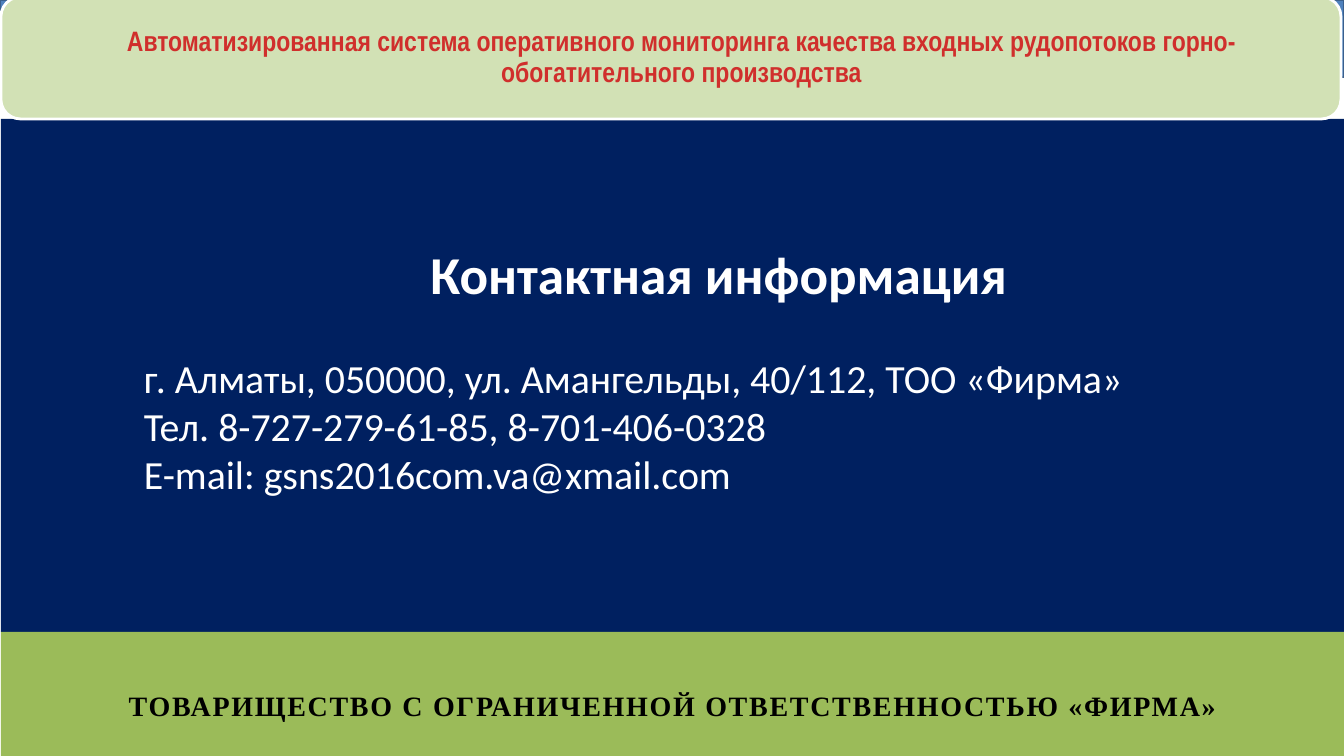
from dataclasses import dataclass

import pptx
import pptx.dml.color
import pptx.enum.shapes
import pptx.enum.text
import pptx.util

EMU_PER_PX = 9071
SHAPES = pptx.enum.shapes.MSO_SHAPE
ALIGN = pptx.enum.text.PP_ALIGN
ANCHOR = pptx.enum.text.MSO_ANCHOR


@dataclass
class Line:
    text: str
    size: float
    font: str
    color: str
    bold: bool = False
    align: ALIGN = ALIGN.CENTER
    space_before: float = 0
    line_spacing: float = 1.0
    tracking: int = 0


@dataclass
class Panel:
    box: tuple[int, int, int, int]
    fill: str
    outline: str | None = None
    kind: SHAPES = SHAPES.RECTANGLE
    corner: float | None = None
    insets: tuple[int, int, int, int] = (0, 0, 0, 0)
    anchor: ANCHOR = ANCHOR.TOP
    lines: tuple[Line, ...] = ()


def px(length: int) -> pptx.util.Emu:
    return pptx.util.Emu(length * EMU_PER_PX)


def rgb(color: str) -> pptx.dml.color.RGBColor:
    return pptx.dml.color.RGBColor.from_string(color)


def write_lines(text_frame, panel_insets: tuple[int, int, int, int],
                anchor: ANCHOR, lines: tuple[Line, ...]) -> None:
    text_frame.word_wrap = True
    text_frame.vertical_anchor = anchor
    (text_frame.margin_left, text_frame.margin_top,
     text_frame.margin_right, text_frame.margin_bottom) = map(px, panel_insets)
    for index, line in enumerate(lines):
        paragraph = text_frame.add_paragraph() if index else text_frame.paragraphs[0]
        paragraph.alignment = line.align
        paragraph.line_spacing = line.line_spacing
        if line.space_before:
            paragraph.space_before = pptx.util.Pt(line.space_before)
        run = paragraph.add_run()
        run.text = line.text
        if line.tracking:
            run.font._element.set("spc", str(line.tracking))
        paragraph.font.size = pptx.util.Pt(line.size)
        paragraph.font.name = line.font
        paragraph.font.bold = line.bold
        paragraph.font.color.rgb = rgb(line.color)


def draw_panel(slide, panel: Panel) -> None:
    shape = slide.shapes.add_shape(panel.kind, *map(px, panel.box))
    shape.shadow.inherit = False
    shape.fill.solid()
    shape.fill.fore_color.rgb = rgb(panel.fill)
    if panel.outline:
        shape.line.color.rgb = rgb(panel.outline)
        shape.line.width = pptx.util.Pt(2)
    else:
        shape.line.fill.background()
    if panel.corner is not None:
        shape.adjustments[0] = panel.corner
    if panel.lines:
        write_lines(shape.text_frame, panel.insets, panel.anchor, panel.lines)


def contact_line(text: str, space_before: float = 0) -> Line:
    return Line(text, 28.5, "Calibri", "FFFFFF", align=ALIGN.LEFT,
                space_before=space_before)


PANELS = (
    Panel((1, 119, 1343, 513), "002060"),
    Panel((0, 0, 1344, 77), "4F81BD", outline="3A5F8C"),
    Panel((1, -3, 1340, 122), "D2E1B5", outline="FFFFFF",
          kind=SHAPES.ROUNDED_RECTANGLE, corner=0.16,
          insets=(33, 12, 12, 12), anchor=ANCHOR.MIDDLE,
          lines=(Line("Автоматизированная система оперативного мониторинга качества "
                      "входных рудопотоков горно-обогатительного производства",
                      20, "Arial Narrow", "D02F2C", bold=True, line_spacing=0.9),)),
    Panel((1, 632, 1343, 124), "9BBB59", insets=(12, 57, 12, 6),
          lines=(Line("ТОВАРИЩЕСТВО С ОГРАНИЧЕННОЙ ОТВЕТСТВЕННОСТЬЮ «ФИРМА»",
                      20, "Times New Roman", "000000", bold=True, tracking=120),)),
)

CONTACT_BOX = (26, 235, 1280, 357)
CONTACT_INSETS = (118, 6, 12, 6)
CONTACT_LINES = (
    Line("Контактная информация", 38, "Calibri", "FFFFFF", bold=True),
    contact_line("г. Алматы, 050000, ул. Амангельды, 40/112, ТОО «Фирма»", 35),
    contact_line("Тел. 8-727-279-61-85, 8-701-406-0328"),
    contact_line("E-mail: gsns2016com.va@xmail.com"),
)


def main() -> None:
    presentation = pptx.Presentation()
    presentation.slide_width = px(1344)
    presentation.slide_height = px(756)
    slide = presentation.slides.add_slide(presentation.slide_layouts[6])
    for panel in PANELS:
        draw_panel(slide, panel)
    contacts = slide.shapes.add_textbox(*map(px, CONTACT_BOX))
    write_lines(contacts.text_frame, CONTACT_INSETS, ANCHOR.TOP, CONTACT_LINES)
    presentation.save("out.pptx")


if __name__ == "__main__":
    main()
